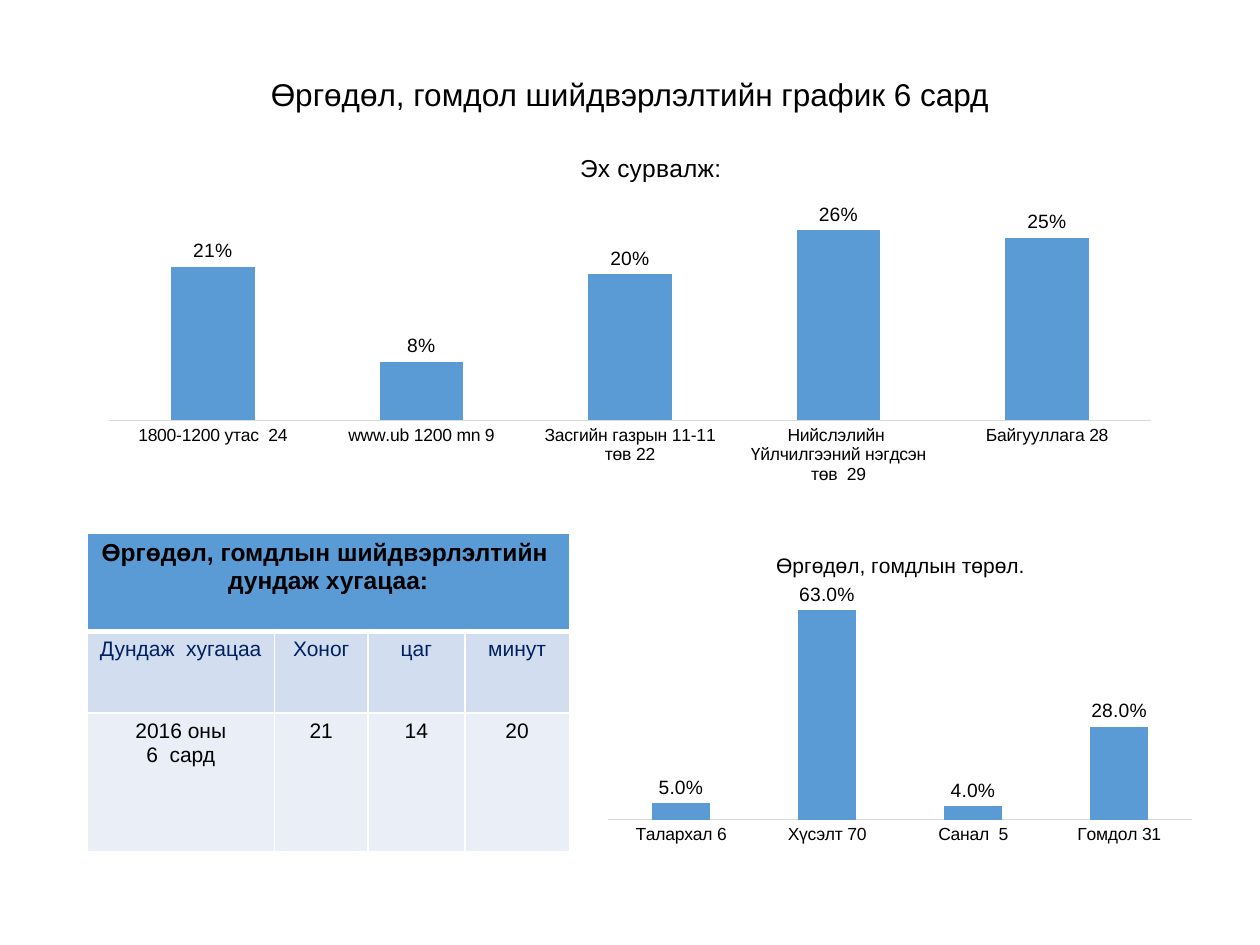
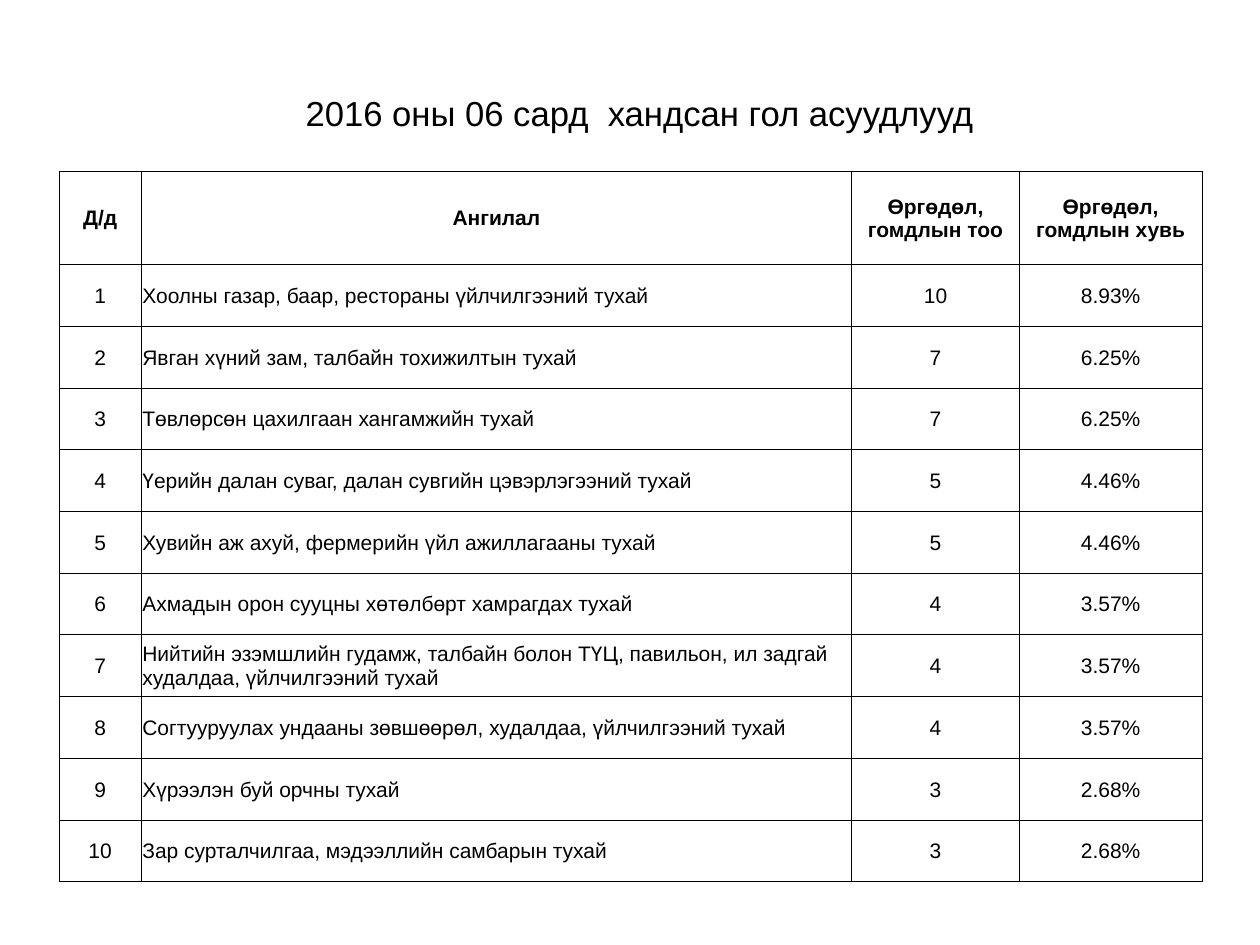
from lxml.etree import SubElement
from pptx import Presentation
from pptx.chart.data import CategoryChartData
from pptx.dml.color import RGBColor
from pptx.enum.chart import XL_CHART_TYPE, XL_LABEL_POSITION, XL_TICK_MARK
from pptx.enum.text import MSO_ANCHOR, MSO_AUTO_SIZE, PP_ALIGN
from pptx.oxml.ns import qn
from pptx.util import Inches, Pt

FONT = "Arial"
BLACK, WHITE, NAVY = "000000", "FFFFFF", "002060"
BLUE, PALE_BLUE, PALEST_BLUE, GREY = "5B9BD5", "D2DEEF", "EAEFF7", "D9D9D9"
colour = RGBColor.from_string


def write(para, text, size, ink=BLACK, bold=False, align=PP_ALIGN.CENTER):
    para.alignment = align
    span = para.add_run()
    span.text = text
    span.font.name = FONT
    span.font.size = Pt(size)
    span.font.bold = bold
    span.font.color.rgb = colour(ink)


def dress_cell(cell, fill, border, widths):
    """Fill a cell and draw its left, right, top and bottom borders (widths in points)."""
    cell.fill.solid()
    cell.fill.fore_color.rgb = colour(fill)
    properties = cell._tc.get_or_add_tcPr()
    for order, (side, width) in enumerate(zip("LRTB", widths)):
        line = SubElement(properties, qn(f"a:ln{side}"), w=str(Pt(width)))
        SubElement(SubElement(line, qn("a:solidFill")), qn("a:srgbClr"), val=border)
        properties.insert(order, line)


deck = Presentation()
deck.slide_width, deck.slide_height = Inches(10), Inches(7.5)

# Pages and titles
margin = 0.69
content_width = 10 - 2 * margin
titles = [
    ("Өргөдөл, гомдол шийдвэрлэлтийн график 6 сард", 18, (margin, 0.4, content_width, 0.69)),
    ("2016 оны 06 сард  хандсан гол асуудлууд", 19.8, (0.98, 0.43, 8.19, 0.93)),
]
pages = []
for text, size, area in titles:
    page = deck.slides.add_slide(deck.slide_layouts[5])
    title = page.shapes.title
    title.left, title.top, title.width, title.height = map(Inches, area)
    title.text_frame.auto_size = MSO_AUTO_SIZE.NONE
    title.text_frame.vertical_anchor = MSO_ANCHOR.MIDDLE
    write(title.text_frame.paragraphs[0], text, size)
    pages.append(page)
summary_page, issues_page = pages

# Average handling time
lower_top, lower_height = 4.23, 2.53
time_columns = [1.49, 0.74, 0.77, 0.83]
time_rows = [
    (0.78, BLUE, 14, BLACK, ["Өргөдөл, гомдлын шийдвэрлэлтийн  дундаж хугацаа:", "", "", ""]),
    (0.65, PALE_BLUE, 12, NAVY, ["Дундаж  хугацаа", "Хоног", "цаг", "минут"]),
    (1.1, PALEST_BLUE, 12, BLACK, ["2016 оны\n6  сард", "21", "14", "20"]),
]
time_table = summary_page.shapes.add_table(
    len(time_rows), len(time_columns), Inches(margin), Inches(lower_top),
    Inches(sum(time_columns)), Inches(lower_height)).table
time_table.first_row = time_table.horz_banding = False
for column, width in zip(time_table.columns, time_columns):
    column.width = Inches(width)
time_table.cell(0, 0).merge(time_table.cell(0, 3))
for row, (height, fill, size, ink, texts) in enumerate(time_rows):
    time_table.rows[row].height = Inches(height)
    for column, text in enumerate(texts):
        cell = time_table.cell(row, column)
        dress_cell(cell, fill, WHITE, (1, 1, 3 if row == 1 else 1, 3 if row == 0 else 1))
        if not text:
            continue
        for number, line_text in enumerate(text.split("\n")):
            frame = cell.text_frame
            para = frame.add_paragraph() if number else frame.paragraphs[0]
            write(para, line_text, size, ink, bold=row == 0)

# Charts: complaint types below, sources above
charts = [
    {
        "title": "Өргөдөл, гомдлын төрөл.", "size": 12, "format": "0.0%", "top_value": 0.7,
        "area": (4.73, lower_top, 4.83, lower_height),
        "title_at": (0.29, 0.05), "plot_at": (0.02, 0.17, 0.96, 0.73),
        "shares": {"Талархал 6": 0.05, "Хүсэлт 70": 0.63, "Санал  5": 0.04, "Гомдол 31": 0.28},
    },
    {
        "title": "Эх сурвалж:", "size": 14, "format": "0%", "top_value": 0.3,
        "area": (margin, 1.09, content_width, 2.81),
        "title_at": (0.45, 0.03), "plot_at": (0.02, 0.18, 0.96, 0.62),
        "shares": {
            "1800-1200 утас  24": 0.21,
            "www.ub 1200 mn 9": 0.08,
            "Засгийн газрын 11-11 төв 22": 0.2,
            "Нийслэлийн  Үйлчилгээний нэгдсэн төв  29": 0.26,
            "Байгууллага 28": 0.25,
        },
    },
]
for design in charts:
    data = CategoryChartData(number_format=design["format"])
    data.categories = list(design["shares"])
    data.add_series("Series 1", list(design["shares"].values()))
    chart = summary_page.shapes.add_chart(
        XL_CHART_TYPE.COLUMN_CLUSTERED, *map(Inches, design["area"]), data).chart
    chart.has_legend = False
    chart.font.name, chart.font.size = "Calibri", Pt(10)
    chart.font.color.rgb = colour(BLACK)
    write(chart.chart_title.text_frame.paragraphs[0], design["title"], design["size"])

    plot = chart.plots[0]
    plot.gap_width, plot.overlap, plot.vary_by_categories = 150, -25, False
    bars = plot.series[0].format.fill
    bars.solid()
    bars.fore_color.rgb = colour(BLUE)

    plot.has_data_labels = True
    labels = plot.data_labels
    labels.show_value = True
    labels.position = XL_LABEL_POSITION.OUTSIDE_END
    labels.number_format, labels.number_format_is_linked = design["format"], False
    labels.font.name, labels.font.size = FONT, Pt(11)
    labels.font.color.rgb = colour(BLACK)

    value_axis, category_axis = chart.value_axis, chart.category_axis
    value_axis.visible = value_axis.has_major_gridlines = False
    value_axis.minimum_scale, value_axis.maximum_scale = 0, design["top_value"]
    category_axis.major_tick_mark = XL_TICK_MARK.NONE
    category_axis.format.line.color.rgb = colour(GREY)
    category_axis.format.line.width = Pt(0.75)
    category_axis.tick_labels.font.name = FONT
    category_axis.tick_labels.font.size = Pt(10)
    category_axis.tick_labels.font.color.rgb = colour(BLACK)

    # Fixed places, as shares of the chart's own size
    for tag, order, place in (("c:title", 1, design["title_at"]),
                              ("c:plotArea", 0, design["plot_at"])):
        part = chart.element.find(f".//{qn(tag)}")
        for automatic in part.findall(qn("c:layout")):
            part.remove(automatic)
        layout = SubElement(part, qn("c:layout"))
        manual = SubElement(layout, qn("c:manualLayout"))
        if tag == "c:plotArea":
            SubElement(manual, qn("c:layoutTarget"), val="inner")
        for mode in ("xMode", "yMode"):
            SubElement(manual, qn(f"c:{mode}"), val="edge")
        for name, share in zip("xywh", place):
            SubElement(manual, qn(f"c:{name}"), val=str(share))
        part.insert(order, layout)

# Main issues raised
issue_columns = [0.65, 5.64, 1.33, 1.45]
header_height, issue_height = 0.74, 0.49
issues = [
    ("Хоолны газар, баар, рестораны үйлчилгээний тухай", "10", "8.93%"),
    ("Явган хүний зам, талбайн тохижилтын тухай", "7", "6.25%"),
    ("Төвлөрсөн цахилгаан хангамжийн тухай", "7", "6.25%"),
    ("Үерийн далан суваг, далан сувгийн цэвэрлэгээний тухай", "5", "4.46%"),
    ("Хувийн аж ахуй, фермерийн үйл ажиллагааны тухай", "5", "4.46%"),
    ("Ахмадын орон сууцны хөтөлбөрт хамрагдах тухай", "4", "3.57%"),
    ("Нийтийн эзэмшлийн гудамж, талбайн болон ТҮЦ, павильон, ил задгай худалдаа, "
     "үйлчилгээний тухай", "4", "3.57%"),
    ("Согтууруулах ундааны зөвшөөрөл, худалдаа, үйлчилгээний тухай", "4", "3.57%"),
    ("Хүрээлэн буй орчны тухай", "3", "2.68%"),
    ("Зар сурталчилгаа, мэдээллийн самбарын тухай", "3", "2.68%"),
]
issue_rows = [("Д/д", "Ангилал", "Өргөдөл, гомдлын тоо", "Өргөдөл, гомдлын хувь")]
issue_rows += [(str(number), *issue) for number, issue in enumerate(issues, 1)]
issue_table = issues_page.shapes.add_table(
    len(issue_rows), len(issue_columns), Inches(0.47), Inches(1.36),
    Inches(sum(issue_columns)), Inches(header_height + len(issues) * issue_height)).table
issue_table.first_row = issue_table.horz_banding = False
for column, width in zip(issue_table.columns, issue_columns):
    column.width = Inches(width)
for row, texts in enumerate(issue_rows):
    issue_table.rows[row].height = Inches(issue_height if row else header_height)
    for column, text in enumerate(texts):
        cell = issue_table.cell(row, column)
        dress_cell(cell, WHITE, BLACK, [0.5] * 4)
        cell.margin_left = cell.margin_right = cell.margin_top = Inches(0.01)
        cell.margin_bottom = 0
        cell.vertical_anchor = MSO_ANCHOR.MIDDLE
        align = PP_ALIGN.LEFT if row and column == 1 else PP_ALIGN.CENTER
        write(cell.text_frame.paragraphs[0], text, 12, bold=row == 0, align=align)

deck.save("out.pptx")
